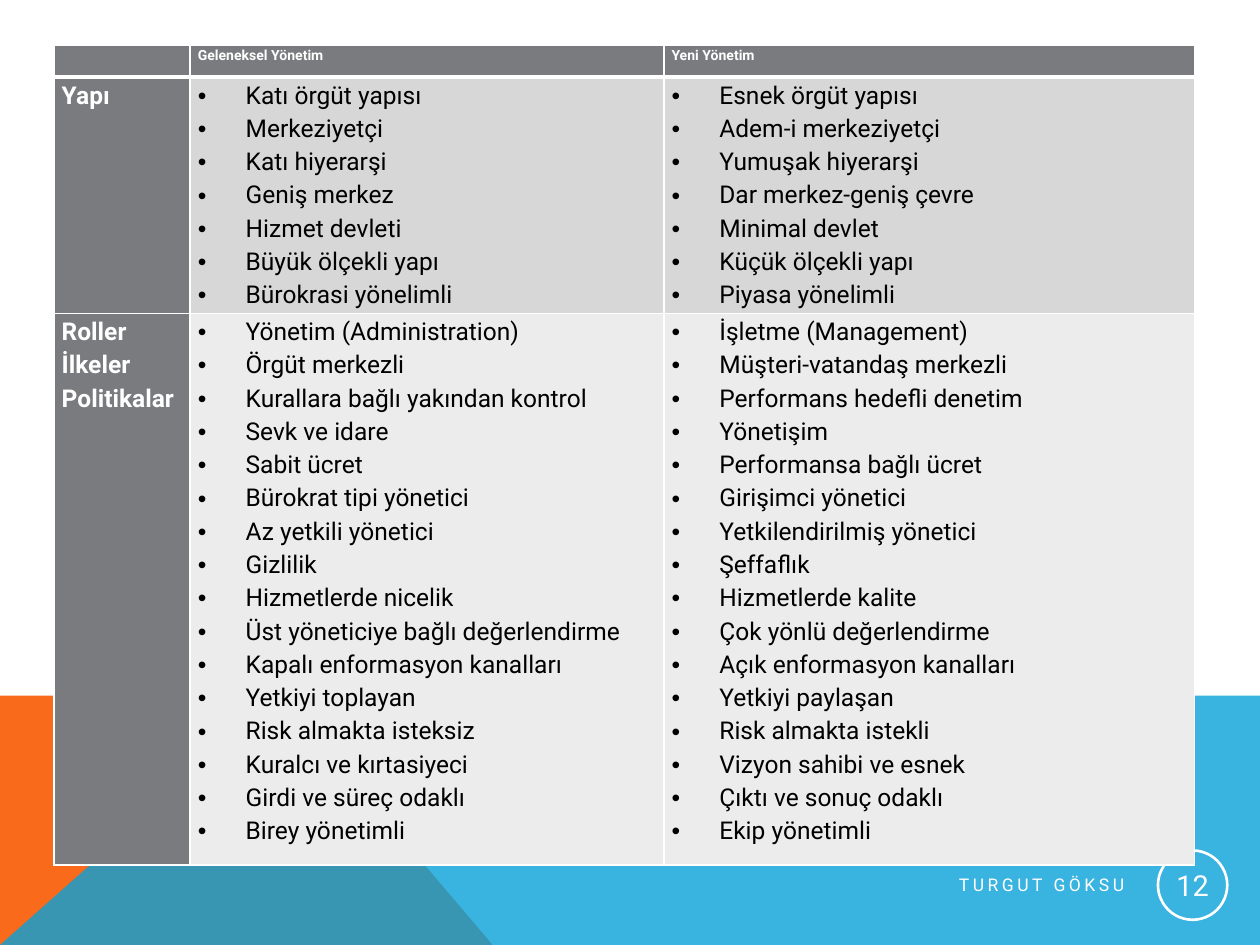
from lxml import etree
from pptx import Presentation
from pptx.dml.color import RGBColor
from pptx.enum.shapes import MSO_SHAPE
from pptx.enum.text import MSO_ANCHOR, PP_ALIGN
from pptx.oxml.ns import qn
from pptx.util import Inches, Pt

ELLIPSE = MSO_SHAPE.OVAL
MIDDLE = MSO_ANCHOR.MIDDLE
CENTER, RIGHT = PP_ALIGN.CENTER, PP_ALIGN.RIGHT
FONT = "Roboto"
WHITE, BLACK, GRAY = "FFFFFF", "000000", "797B7E"


def color(value):
    return RGBColor.from_string(value)


def style(paragraph, size, value, bold=False):
    paragraph.font.name = FONT
    paragraph.font.size = Pt(size)
    paragraph.font.bold = bold
    paragraph.font.color.rgb = color(value)


presentation = Presentation()
presentation.slide_width = Inches(10)
presentation.slide_height = Inches(7.5)
slide = presentation.slides.add_slide(presentation.slide_layouts[6])

bands = [
    ([(0, 7.5), (0, 5.52), (2.23, 5.52), (3.91, 7.5)], "F96A1B", None),
    ([(0, 7.5), (2.23, 5.52), (10, 5.52), (10, 7.5)], "08A1D9", 80),
]
for points, fill, opacity in bands:
    corners = [(Inches(x), Inches(y)) for x, y in points]
    builder = slide.shapes.build_freeform(*corners[0])
    builder.add_line_segments(corners[1:], close=True)
    band = builder.convert_to_shape()
    band.shadow.inherit = False
    band.line.fill.background()
    band.fill.solid()
    band.fill.fore_color.rgb = color(fill)
    if opacity:
        fill_color = band.fill._xPr.find(qn("a:solidFill"))[0]
        etree.SubElement(fill_color, qn("a:alpha"), val=str(opacity * 1000))

footer = slide.shapes.add_textbox(Inches(3.85), Inches(6.87), Inches(5.17), Inches(0.3))
footer.text_frame.word_wrap = True
footer.text_frame.vertical_anchor = MIDDLE
paragraph = footer.text_frame.paragraphs[0]
paragraph.alignment = RIGHT
run = paragraph.add_run()
run.text = "TURGUT GÖKSU"
run.font._element.set("spc", "200")
style(paragraph, 10, WHITE)

badge = slide.shapes.add_shape(ELLIPSE, Inches(9.19), Inches(6.75), Inches(0.55), Inches(0.55))
badge.shadow.inherit = False
badge.fill.background()
badge.line.color.rgb = color(WHITE)
badge.line.width = Pt(1.5)
frame = badge.text_frame
frame.margin_left = frame.margin_right = frame.margin_top = frame.margin_bottom = Inches(0.01)
frame.vertical_anchor = MIDDLE
paragraph = frame.paragraphs[0]
paragraph.text = "12"
paragraph.alignment = CENTER
style(paragraph, 16.5, WHITE)

rows = [
    [[""], ["Geleneksel Yönetim"], ["Yeni Yönetim"]],
    [
        ["Yapı"],
        ["Katı örgüt yapısı", "Merkeziyetçi", "Katı hiyerarşi", "Geniş merkez",
         "Hizmet devleti", "Büyük ölçekli yapı", "Bürokrasi yönelimli"],
        ["Esnek örgüt yapısı", "Adem-i merkeziyetçi", "Yumuşak hiyerarşi",
         "Dar merkez-geniş çevre", "Minimal devlet", "Küçük ölçekli yapı",
         "Piyasa yönelimli"],
    ],
    [
        ["Roller", "İlkeler", "Politikalar"],
        ["Yönetim (Administration)", "Örgüt merkezli", "Kurallara bağlı yakından kontrol",
         "Sevk ve idare", "Sabit ücret", "Bürokrat tipi yönetici", "Az yetkili yönetici",
         "Gizlilik", "Hizmetlerde nicelik", "Üst yöneticiye bağlı değerlendirme",
         "Kapalı enformasyon kanalları", "Yetkiyi toplayan", "Risk almakta isteksiz",
         "Kuralcı ve kırtasiyeci", "Girdi ve süreç odaklı", "Birey yönetimli"],
        ["İşletme (Management)", "Müşteri-vatandaş merkezli", "Performans hedefli denetim",
         "Yönetişim", "Performansa bağlı ücret", "Girişimci yönetici",
         "Yetkilendirilmiş yönetici", "Şeffaflık", "Hizmetlerde kalite",
         "Çok yönlü değerlendirme", "Açık enformasyon kanalları", "Yetkiyi paylaşan",
         "Risk almakta istekli", "Vizyon sahibi ve esnek", "Çıktı ve sonuç odaklı",
         "Ekip yönetimli"],
    ],
]
column_widths = [1.08, 3.76, 4.21]
row_heights = [0.25, 1.85, 4.38]
row_fills = [GRAY, "D7D7D8", "ECECEC"]

table = slide.shapes.add_table(
    3, 3, Inches(0.43), Inches(0.36), Inches(sum(column_widths)), Inches(sum(row_heights))
).table
for column, width in zip(table.columns, column_widths):
    column.width = Inches(width)
for row, height in zip(table.rows, row_heights):
    row.height = Inches(height)

for row_index, row in enumerate(rows):
    for column_index, lines in enumerate(row):
        cell = table.cell(row_index, column_index)
        cell.margin_left = cell.margin_right = Inches(0.06)
        cell.margin_top = cell.margin_bottom = 0
        is_header = row_index == 0 or column_index == 0

        properties = cell._tc.get_or_add_tcPr()
        for side in ("L", "R", "T", "B"):
            under_header = (row_index, side) in [(0, "B"), (1, "T")]
            width = Pt(3 if under_header else 1)
            border = etree.SubElement(properties, qn(f"a:ln{side}"), w=str(width))
            border_fill = etree.SubElement(border, qn("a:solidFill"))
            etree.SubElement(border_fill, qn("a:srgbClr"), val=WHITE)
        cell.fill.solid()
        cell.fill.fore_color.rgb = color(GRAY if is_header else row_fills[row_index])

        cell.text = "\n".join(lines)
        for paragraph in cell.text_frame.paragraphs:
            paragraph.line_spacing = 1.15
            if not is_header:
                bullet = paragraph._p.get_or_add_pPr()
                bullet.set("marL", str(Inches(0.38)))
                bullet.set("indent", str(-Inches(0.38)))
                etree.SubElement(bullet, qn("a:buFont"), typeface="Arial")
                etree.SubElement(bullet, qn("a:buChar"), char="•")
            style(paragraph, 8 if row_index == 0 else 14, WHITE if is_header else BLACK, is_header)

presentation.save("out.pptx")
